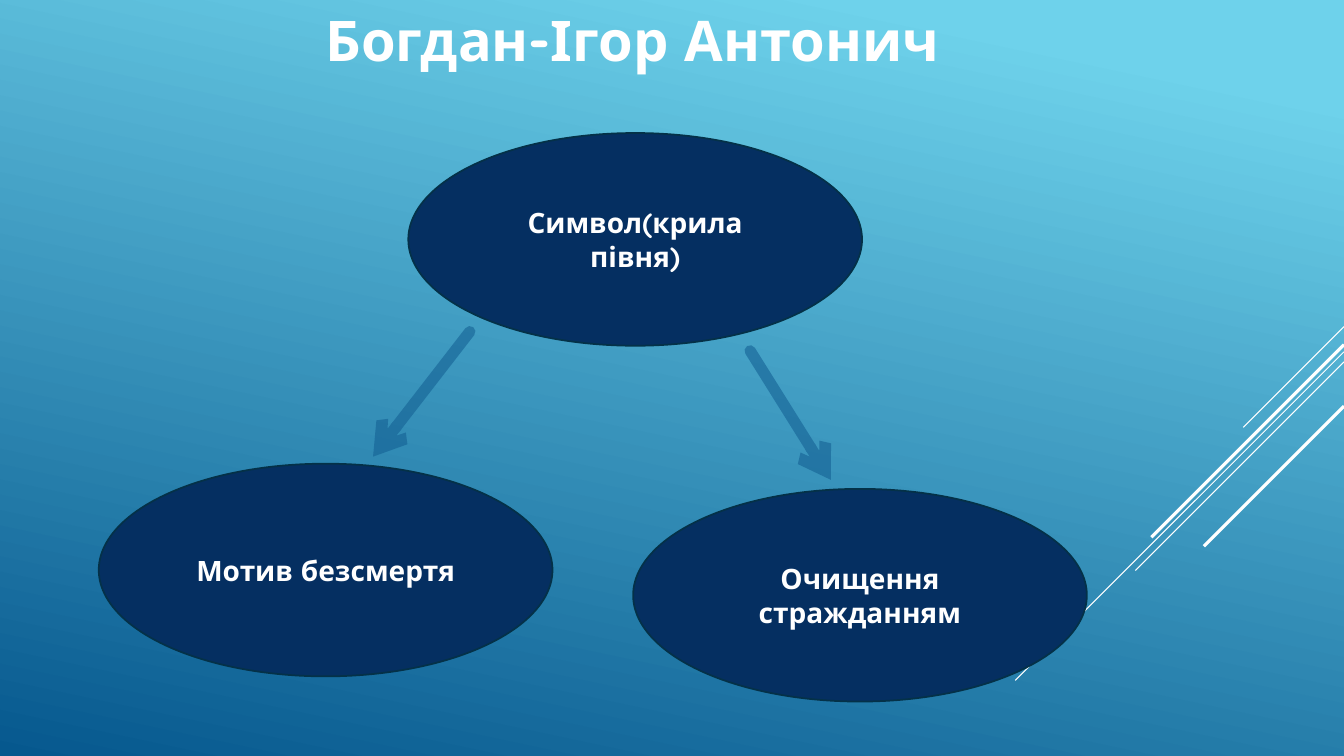
from lxml.etree import SubElement
from pptx import Presentation
from pptx.dml.color import RGBColor
from pptx.enum.shapes import MSO_CONNECTOR, MSO_SHAPE
from pptx.enum.text import MSO_ANCHOR, MSO_AUTO_SIZE, PP_ALIGN
from pptx.oxml.ns import qn
from pptx.util import Inches, Pt

FONT = "Quicksand"
COLORS = {
    "sky": "6ED2EB",
    "deep": "06588E",
    "white": "FFFFFF",
    "oval": "052F61",
    "outline": "043148",
    "arrow": "146194",
}

TITLE = "Богдан-Ігор Антонич"
OVAL_SIZE = (4.5, 2.11)
IDEAS = [  # text, left, top
    ("Символ(крила півня)", 4.05, 1.32),
    ("Мотив безсмертя", 0.98, 4.6),
    ("Очищення стражданням", 6.28, 4.85),
]
ARROWS = [((4.66, 3.29), (3.7, 4.53)), ((7.44, 3.48), (8.24, 4.76))]
RIGHT_EDGE = 13.33
RAYS = [  # top at the right edge, horizontal and vertical run, line width
    (3.24, 1.0, 0.75),
    (3.49, 3.26, 0.75),
    (3.59, 2.07, 0.75),
    (3.42, 1.91, 2.25),
    (4.03, 1.39, 2.25),
]


def rgb(name):
    return RGBColor.from_string(COLORS[name])


def style_text(paragraph, size, align):
    paragraph.alignment = align
    for run in paragraph.runs:
        run.font.name = FONT
        run.font.size = Pt(size)
        run.font.bold = True
        run.font.color.rgb = rgb("white")


def add_line(slide, start, end, color, width):
    connector = slide.shapes.add_connector(
        MSO_CONNECTOR.STRAIGHT, *map(Inches, (*start, *end)))
    connector.line.color.rgb = rgb(color)
    connector.line.width = Pt(width)
    SubElement(connector._element.spPr, qn("a:effectLst"))
    return connector


def add_arrow(slide, start, end):
    """Draw a thick, round-capped, partly transparent arrow."""
    line = add_line(slide, start, end, "arrow", 8).line
    ln = line._get_or_add_ln()
    ln.set("cap", "rnd")
    SubElement(ln.find(".//" + qn("a:srgbClr")), qn("a:alpha"), val="60000")
    SubElement(ln, qn("a:tailEnd"), type="arrow")


def add_oval(slide, text, left, top):
    oval = slide.shapes.add_shape(
        MSO_SHAPE.OVAL, *map(Inches, (left, top, *OVAL_SIZE)))
    oval.shadow.inherit = False
    oval.fill.solid()
    oval.fill.fore_color.rgb = rgb("oval")
    oval.line.color.rgb = rgb("outline")
    oval.line.width = Pt(1.25)
    frame = oval.text_frame
    frame.text = text
    frame.word_wrap = True
    frame.vertical_anchor = MSO_ANCHOR.MIDDLE
    style_text(frame.paragraphs[0], 20, PP_ALIGN.CENTER)


def paint_background(slide):
    fill = slide.background.fill
    fill.gradient()
    fill.gradient_angle = 258
    for stop, color, position in zip(fill.gradient_stops, ("sky", "deep"), (0.1, 1)):
        stop.color.rgb = rgb(color)
        stop.position = position


def set_title(slide):
    title = slide.shapes.title
    title.left, title.top, title.width, title.height = map(
        Inches, (3.13, 0, 6.3, 0.77))
    frame = title.text_frame
    frame.text = TITLE
    frame.word_wrap = False
    frame.auto_size = MSO_AUTO_SIZE.SHAPE_TO_FIT_TEXT
    frame.vertical_anchor = MSO_ANCHOR.TOP
    style_text(frame.paragraphs[0], 40, PP_ALIGN.LEFT)


def main():
    deck = Presentation()
    deck.slide_width, deck.slide_height = Inches(13.33), Inches(7.5)
    slide = deck.slides.add_slide(deck.slide_layouts[5])
    paint_background(slide)
    set_title(slide)
    for top, run, width in RAYS:
        add_line(slide, (RIGHT_EDGE, top), (RIGHT_EDGE - run, top + run),
                 "white", width)
    for start, end in ARROWS:
        add_arrow(slide, start, end)
    for idea in IDEAS:
        add_oval(slide, *idea)
    deck.save("out.pptx")


if __name__ == "__main__":
    main()
